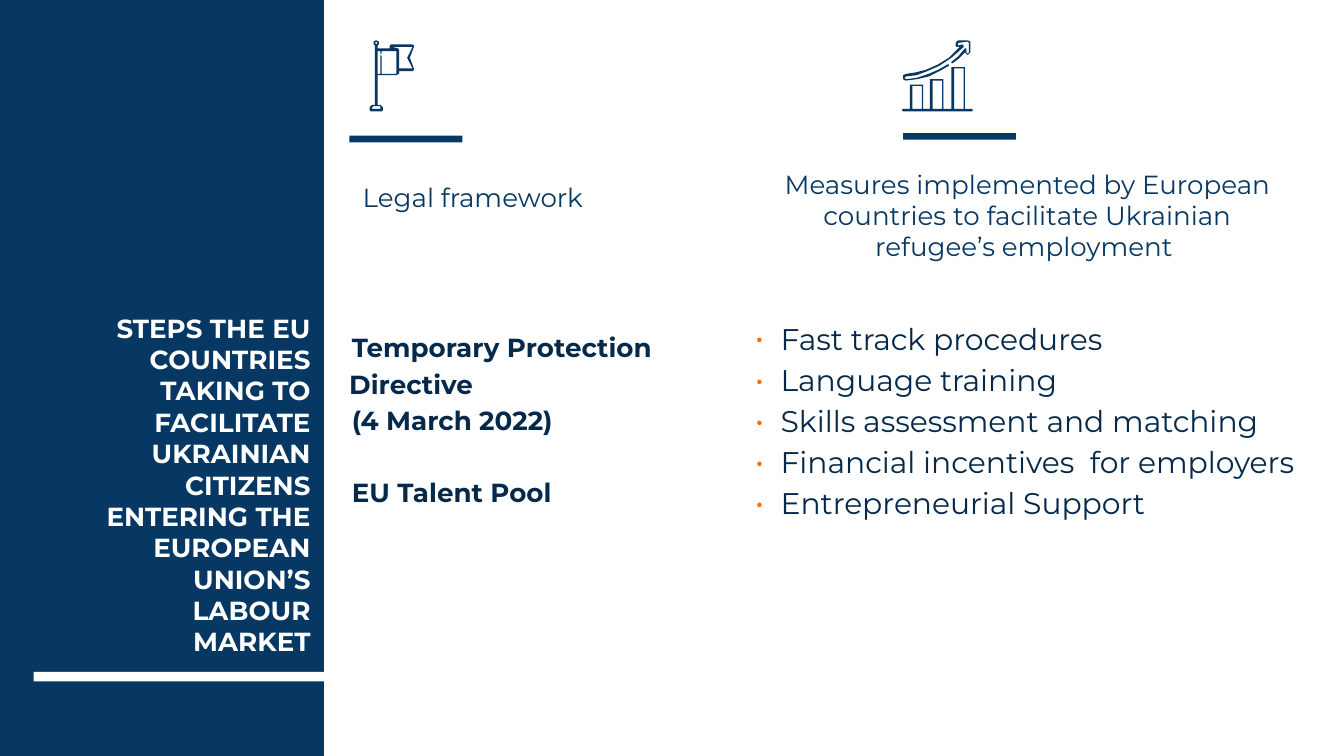
"""Build a slide on EU steps that help Ukrainian citizens enter the labour market."""
from lxml.etree import SubElement
from pptx import Presentation
from pptx.dml.color import RGBColor
from pptx.enum.shapes import MSO_SHAPE
from pptx.enum.text import MSO_ANCHOR, PP_ALIGN
from pptx.oxml.ns import qn
from pptx.util import Inches, Pt

NAVY, INK, ORANGE, WHITE = "073763", "05294A", "FF6B03", "FFFFFF"
FONT = "Montserrat"

BARS = [
    ((-0.04, -0.07, 2.45, 5.77), NAVY),
    ((0.25, 5, 2.28, 0.07), WHITE),
    ((2.6, 1.01, 0.84, 0.05), NAVY),
    ((6.72, 0.99, 0.84, 0.05), NAVY),
]

TITLE = ["STEPS THE EU COUNTRIES TAKING TO FACILITATE UKRAINIAN CITIZENS "
         "ENTERING THE EUROPEAN UNION’S LABOUR MARKET"]
MEASURES_HEAD = ["Measures implemented by European countries to facilitate "
                 "Ukrainian refugee’s employment "]
MEASURES = [
    "Fast track procedures",
    "Language training",
    "Skills assessment and matching",
    "Financial incentives  for employers",
    "Entrepreneurial Support",
]
LEGAL_HEAD = ["Legal framework"]
LEGAL = ["Temporary Protection Directive", "(4 March 2022)", "EU Talent Pool"]

# Icon outlines in hundredths of an inch
FLAG = [
    [(280, 30), (278, 31), (278, 33), (279, 34), (279, 78), (277, 78), (275, 80),
     (275, 82), (276, 83), (284, 83), (285, 82), (285, 80), (283, 78), (281, 78),
     (281, 56), (295, 56), (297, 55), (297, 53), (307, 53), (308, 52), (308, 51),
     (305, 43), (308, 35), (308, 34), (307, 33), (291, 33), (290, 34), (290, 36),
     (281, 36), (281, 34), (282, 33), (282, 31)],
    [(280, 31), (281, 32), (280, 33), (279, 32)],
    [(292, 35), (307, 35), (303, 43), (307, 51), (297, 51), (297, 37), (296, 36)],
    [(281, 38), (283, 38), (283, 40), (284, 40), (284, 38), (295, 38), (295, 55),
     (284, 55), (284, 42), (283, 41), (283, 55), (281, 55)],
    [(278, 79), (283, 79), (283, 81), (277, 81), (277, 80)],
]
COLUMN_TOPS = [(679, 64), (694, 60), (710, 51)]
COLUMN_WIDTH, BASE = 7, 81
ARROW = [
    [(720, 30), (713, 30), (711, 32), (711, 34), (712, 35), (714, 35), (706, 43),
     (698, 48), (689, 52), (681, 54), (674, 55), (672, 56), (672, 59), (674, 60),
     (682, 59), (691, 57), (699, 53), (706, 49), (706, 48), (705, 48), (698, 52),
     (691, 55), (682, 58), (674, 59), (673, 58), (674, 57), (682, 56), (690, 53),
     (699, 49), (708, 43), (717, 35), (717, 34), (716, 33), (713, 34), (713, 32),
     (720, 31), (721, 32), (721, 39), (720, 40), (719, 39), (719, 36), (718, 36),
     (713, 42), (708, 46), (708, 47), (709, 47), (713, 44), (718, 39), (720, 41),
     (722, 39), (722, 31)],
]


def column_chart():
    outline, holes = [(671, 82), (672, BASE)], []
    for x, top in COLUMN_TOPS:
        right = x + COLUMN_WIDTH
        holes.append([(right, top), (right, BASE), (x, BASE), (x, top)])
        outline += [(x - 2, BASE), (x - 2, top - 1),
                    (right + 1, top - 1), (right + 1, BASE)]
    return [outline + [(723, BASE), (724, 82), (723, 83), (672, 83)]] + holes


def rgb(color):
    return RGBColor.from_string(color)


def paint(sp, color):
    sp.shadow.inherit = False
    sp.fill.solid()
    sp.fill.fore_color.rgb = rgb(color)
    sp.line.fill.background()


def add_icon(s, contours):
    first = contours[0]
    fb = s.shapes.build_freeform(*first[0], scale=Inches(0.01))
    fb.add_line_segments(first[1:], close=True)
    for contour in contours[1:]:
        fb.move_to(*contour[0])
        fb.add_line_segments(contour[1:], close=True)
    paint(fb.convert_to_shape(), NAVY)


def add_text(s, box, lines, color, size=14, bold=False, align=PP_ALIGN.LEFT,
             anchor=MSO_ANCHOR.MIDDLE, spacing=1.0, indent=(0, 0), bullet=False):
    tf = s.shapes.add_textbox(*map(Inches, box)).text_frame
    tf.word_wrap = True
    tf.vertical_anchor = anchor
    tf.margin_left = tf.margin_right = tf.margin_top = tf.margin_bottom = Inches(0.1)
    tf.text = "\n".join(lines)
    for p in tf.paragraphs:
        p.alignment, p.line_spacing = align, spacing
        f = p.runs[0].font
        f.name, f.size, f.bold = FONT, Pt(size), bold
        f.color.rgb = rgb(color)
        pPr = p._p.get_or_add_pPr()
        pPr.set("marL", str(Inches(indent[0])))
        pPr.set("indent", str(Inches(indent[1])))
        if bullet:
            SubElement(SubElement(pPr, qn("a:buClr")), qn("a:srgbClr"), val=ORANGE)
            SubElement(pPr, qn("a:buFont"), typeface=FONT)
            SubElement(pPr, qn("a:buChar"), char="•")
    return tf


def main():
    prs = Presentation()
    prs.slide_width, prs.slide_height = Inches(10), Inches(5.625)
    s = prs.slides.add_slide(prs.slide_layouts[6])
    for box, color in BARS:
        paint(s.shapes.add_shape(MSO_SHAPE.RECTANGLE, *map(Inches, box)), color)

    add_text(s, (0.68, 3.81, 1.73, 1.18), TITLE, WHITE, bold=True,
             align=PP_ALIGN.RIGHT, anchor=MSO_ANCHOR.BOTTOM)
    add_text(s, (5.65, 1.41, 3.99, 0.38), MEASURES_HEAD, NAVY, align=PP_ALIGN.CENTER)
    add_text(s, (5.4, 1.54, 4.48, 3.14), MEASURES, INK, size=16, spacing=1.15,
             indent=(0.31, -0.19), bullet=True)
    add_text(s, (2.6, 1.28, 2.79, 0.38), LEGAL_HEAD, NAVY)
    tf = add_text(s, (2.41, 1.8, 2.79, 2.61), LEGAL, INK, bold=True, spacing=1.15,
                  indent=(0.09, 0.02))
    tf.paragraphs[-1].space_before = Pt(19.3)

    for contours in (FLAG, column_chart(), ARROW):
        add_icon(s, contours)
    prs.save("out.pptx")


if __name__ == "__main__":
    main()
